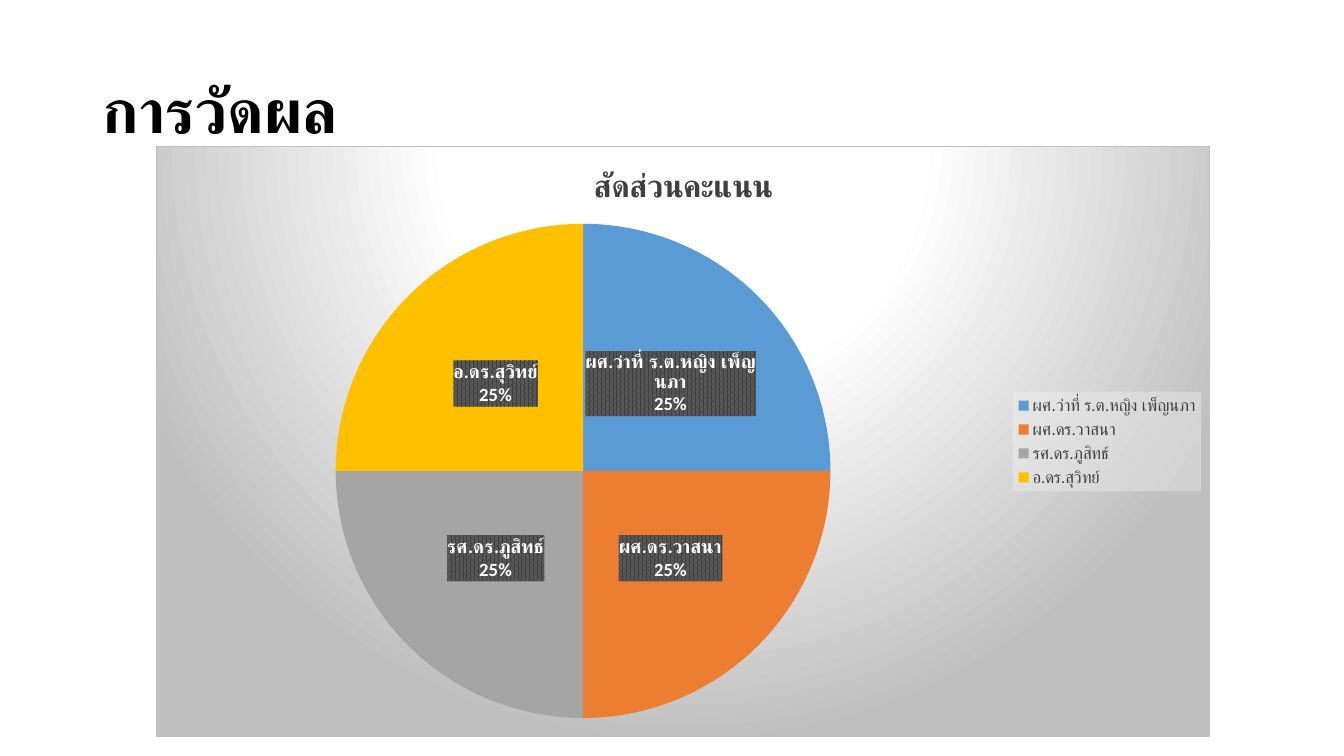
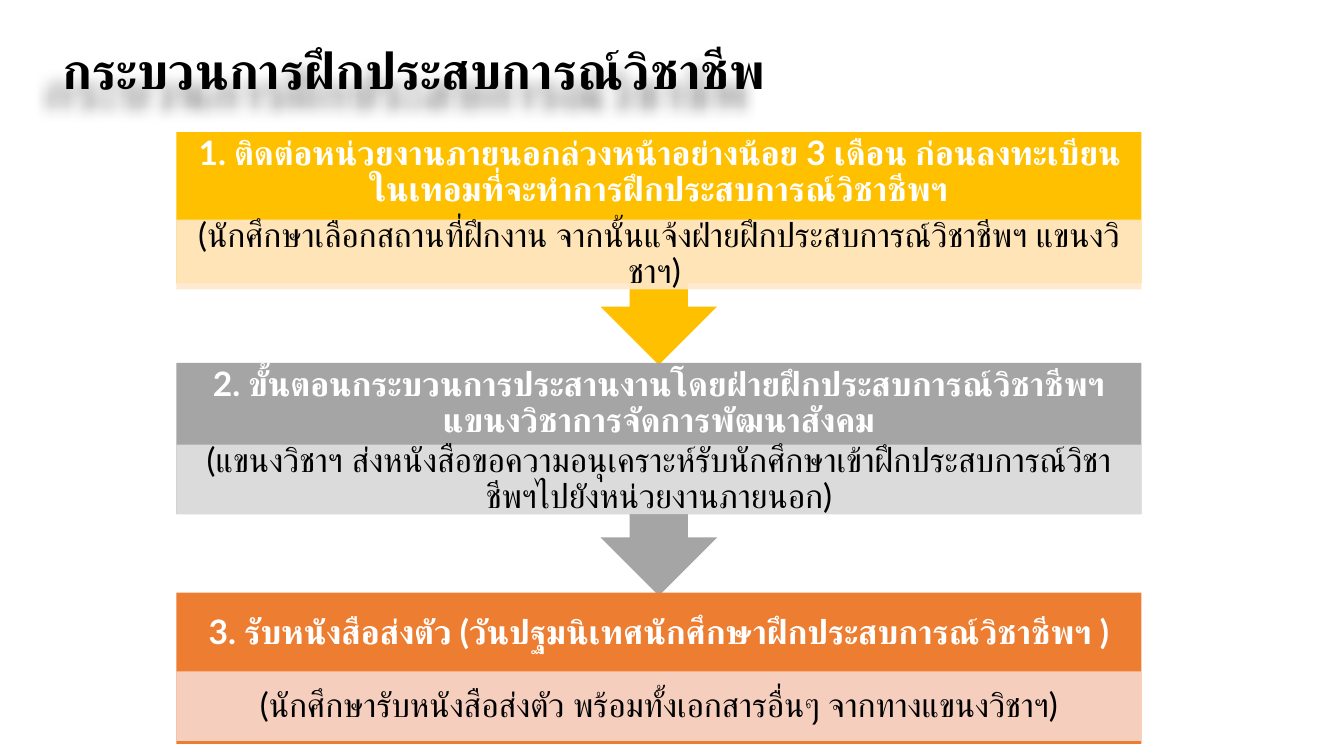
from lxml.etree import SubElement
from pptx import Presentation
from pptx.chart.data import CategoryChartData
from pptx.dml.color import RGBColor
from pptx.enum.chart import XL_CHART_TYPE, XL_LABEL_POSITION, XL_LEGEND_POSITION
from pptx.enum.shapes import MSO_SHAPE
from pptx.enum.text import MSO_ANCHOR, MSO_AUTO_SIZE, PP_ALIGN
from pptx.oxml import parse_xml
from pptx.oxml.ns import nsdecls, qn
from pptx.util import Pt

PX = 9144  # 100 px to the inch
BLACK = RGBColor(0x00, 0x00, 0x00)
WHITE = RGBColor(0xFF, 0xFF, 0xFF)
CHARCOAL = RGBColor(0x40, 0x40, 0x40)
SLATE = RGBColor(0x59, 0x59, 0x59)
SILVER = RGBColor(0xBF, 0xBF, 0xBF)
MIST = RGBColor(0xF2, 0xF2, 0xF2)
BLUE = RGBColor(0x5B, 0x9B, 0xD5)
ORANGE = RGBColor(0xED, 0x7D, 0x31)
GRAY = RGBColor(0xA5, 0xA5, 0xA5)
GOLD = RGBColor(0xFF, 0xC0, 0x00)
PALE_ORANGE = RGBColor(0xF8, 0xD7, 0xCE)
PALE_GRAY = RGBColor(0xE1, 0xE1, 0xE1)
PALE_GOLD = RGBColor(0xFF, 0xE8, 0xCC)
TEXT_FONT = "Lato"
CHART_FONT = "Calibri"

deck = Presentation()
deck.slide_width, deck.slide_height = 1333 * PX, 750 * PX


def write(shape, text, size, color, bold, align):
    """Put one formatted paragraph, centred vertically, into a shape."""
    frame = shape.text_frame
    frame.word_wrap = True
    frame.auto_size = MSO_AUTO_SIZE.NONE
    frame.vertical_anchor = MSO_ANCHOR.MIDDLE
    para = frame.paragraphs[0]
    para.alignment = align
    para.line_spacing = 0.9
    span = para.add_run()
    span.text = text
    span.font.size = Pt(size)
    span.font.bold = bold
    span.font.color.rgb = color
    span.font.name = TEXT_FONT
    # Thai letters take the complex-script font
    SubElement(span.font._element, qn("a:cs"), typeface=TEXT_FONT)


def add_titled_page(text, left, top, size):
    page = deck.slides.add_slide(deck.slide_layouts[5])
    title = page.shapes.title
    title.left, title.top = left * PX, top * PX
    title.width, title.height = 1150 * PX, 145 * PX
    write(title, text, size, BLACK, True, PP_ALIGN.LEFT)
    return page


# Slide 1: share of the score
page = add_titled_page("การวัดผล", 92, 40, 44)
SCORES = [
    ("ผศ.ว่าที่ ร.ต.หญิง เพ็ญนภา", 25, BLUE),
    ("ผศ.ดร.วาสนา", 25, ORANGE),
    ("รศ.ดร.ภูสิทธ์", 25, GRAY),
    ("อ.ดร.สุวิทย์", 25, GOLD),
]
data = CategoryChartData()
data.categories = [name for name, score, color in SCORES]
data.add_series("สัดส่วนคะแนน", [score for name, score, color in SCORES])
chart = page.shapes.add_chart(
    XL_CHART_TYPE.PIE, 155 * PX, 145 * PX, 1045 * PX, 586 * PX, data
).chart
chart.font.size = Pt(10)
chart.font.name = CHART_FONT
chart.font.color.rgb = BLACK

chart.has_title = True
span = chart.chart_title.text_frame.paragraphs[0].add_run()
span.text = "สัดส่วนคะแนน"
span.font.size = Pt(22)
span.font.bold = True
span.font.name = CHART_FONT
span.font.color.rgb = CHARCOAL

chart.has_legend = True
legend = chart.legend
legend.position = XL_LEGEND_POSITION.RIGHT
legend.include_in_layout = False
legend.font.size = Pt(12)
legend.font.name = CHART_FONT
legend.font.color.rgb = CHARCOAL

series = chart.plots[0].series[0]
for index, (name, score, color) in enumerate(SCORES):
    fill = series.points[index].format.fill
    fill.solid()
    fill.fore_color.rgb = color

labels = series.data_labels
labels.show_category_name = True
labels.show_percentage = True
labels.show_value = False
labels.show_legend_key = False
labels.number_format = "0%"
labels.number_format_is_linked = False
labels.position = XL_LABEL_POSITION.CENTER
labels.font.size = Pt(13.3)
labels.font.bold = True
labels.font.name = CHART_FONT
labels.font.color.rgb = WHITE

NAMESPACES = nsdecls("c", "a")
root = chart.element
separator = parse_xml(f"<c:separator {NAMESPACES}>\n</c:separator>")
root.xpath("//c:ser/c:dLbls/c:showBubbleSize")[0].addnext(separator)

BACKDROP = f"""<a:gradFill><a:gsLst>
<a:gs pos="0"><a:srgbClr val="{WHITE}"/></a:gs>
<a:gs pos="39000"><a:srgbClr val="{WHITE}"/></a:gs>
<a:gs pos="100000"><a:srgbClr val="{SILVER}"/></a:gs></a:gsLst>
<a:path path="circle"><a:fillToRect l="50000" t="-80000" r="50000" b="180000"/></a:path>
</a:gradFill><a:ln w="9525"><a:solidFill><a:srgbClr val="{SILVER}"/></a:solidFill></a:ln>"""
LABEL_FILL = f"""<a:pattFill prst="pct75"><a:fgClr><a:srgbClr val="{CHARCOAL}"/></a:fgClr>
<a:bgClr><a:srgbClr val="{SLATE}"/></a:bgClr></a:pattFill>"""
LEGEND_FILL = f"""<a:solidFill><a:srgbClr val="{MIST}"><a:alpha val="39000"/></a:srgbClr>
</a:solidFill>"""
for owner, style in [
    ("/c:chartSpace", BACKDROP),
    ("//c:ser/c:dLbls", LABEL_FILL),
    ("//c:legend", LEGEND_FILL),
]:
    look = parse_xml(f"<c:spPr {NAMESPACES}>{style}</c:spPr>")
    root.xpath(f"{owner}/c:txPr")[0].addprevious(look)

plot_area = root.xpath("//c:plotArea")[0]
for layout in plot_area.xpath("c:layout"):
    plot_area.remove(layout)
plot_area.insert(0, parse_xml(f"""<c:layout {NAMESPACES}><c:manualLayout>
<c:layoutTarget val="inner"/><c:xMode val="edge"/><c:yMode val="edge"/>
<c:x val="0.17"/><c:y val="0.13"/><c:w val="0.47"/><c:h val="0.84"/>
</c:manualLayout></c:layout>"""))

# Slide 2: steps of the placement process
page = add_titled_page("กระบวนการฝึกประสบการณ์วิชาชีพ", 52, 0, 36)
page.shapes.title._element.spPr.append(parse_xml(f"""<a:effectLst {NAMESPACES}>
<a:outerShdw blurRad="127000" dist="254000" dir="8100000" algn="tr" rotWithShape="0">
<a:srgbClr val="{BLACK}"><a:alpha val="40000"/></a:srgbClr></a:outerShdw></a:effectLst>"""))

LEFT, WIDTH = 175, 957
DETAIL_HEIGHT = 69
CALLOUT, BLOCK = (MSO_SHAPE.DOWN_ARROW_CALLOUT, 231), (MSO_SHAPE.RECTANGLE, 150)
STEPS = [
    (CALLOUT, 131, 218, GOLD, PALE_GOLD,
     "1. ติดต่อหน่วยงานภายนอกล่วงหน้าอย่างน้อย 3 เดือน ก่อนลงทะเบียนในเทอมที่จะทำการฝึกประสบการณ์วิชาชีพฯ",
     "(นักศึกษาเลือกสถานที่ฝึกงาน จากนั้นแจ้งฝ่ายฝึกประสบการณ์วิชาชีพฯ แขนงวิชาฯ) "),
    (CALLOUT, 360, 441, GRAY, PALE_GRAY,
     "2. ขั้นตอนกระบวนการประสานงานโดยฝ่ายฝึกประสบการณ์วิชาชีพฯ แขนงวิชาการจัดการพัฒนาสังคม",
     "(แขนงวิชาฯ ส่งหนังสือขอความอนุเคราะห์รับนักศึกษาเข้าฝึกประสบการณ์วิชาชีพฯไปยังหน่วยงานภายนอก)"),
    (BLOCK, 588, 666, ORANGE, PALE_ORANGE,
     "3. รับหนังสือส่งตัว (วันปฐมนิเทศนักศึกษาฝึกประสบการณ์วิชาชีพฯ )",
     "(นักศึกษารับหนังสือส่งตัว พร้อมทั้งเอกสารอื่นๆ จากทางแขนงวิชาฯ)"),
]
for (kind, height), top, detail_top, color, pale, heading, detail in STEPS:
    step = page.shapes.add_shape(kind, LEFT * PX, top * PX, WIDTH * PX, height * PX)
    note = page.shapes.add_shape(
        MSO_SHAPE.RECTANGLE, LEFT * PX, detail_top * PX, WIDTH * PX, DETAIL_HEIGHT * PX
    )
    for box, tint, text, ink, bottom in [
        (step, color, heading, WHITE, DETAIL_HEIGHT),
        (note, pale, detail, BLACK, 0),
    ]:
        box.shadow.inherit = False
        box.fill.solid()
        box.fill.fore_color.rgb = tint
        box.line.fill.background()
        frame = box.text_frame
        frame.margin_left = frame.margin_right = 19 * PX
        frame.margin_top, frame.margin_bottom = 0, bottom * PX
        write(box, text, 24, ink, box is step, PP_ALIGN.CENTER)
    tint = note._element.spPr.find(qn("a:solidFill"))[0]
    SubElement(tint, qn("a:alpha"), val="90000")

deck.save("out.pptx")
